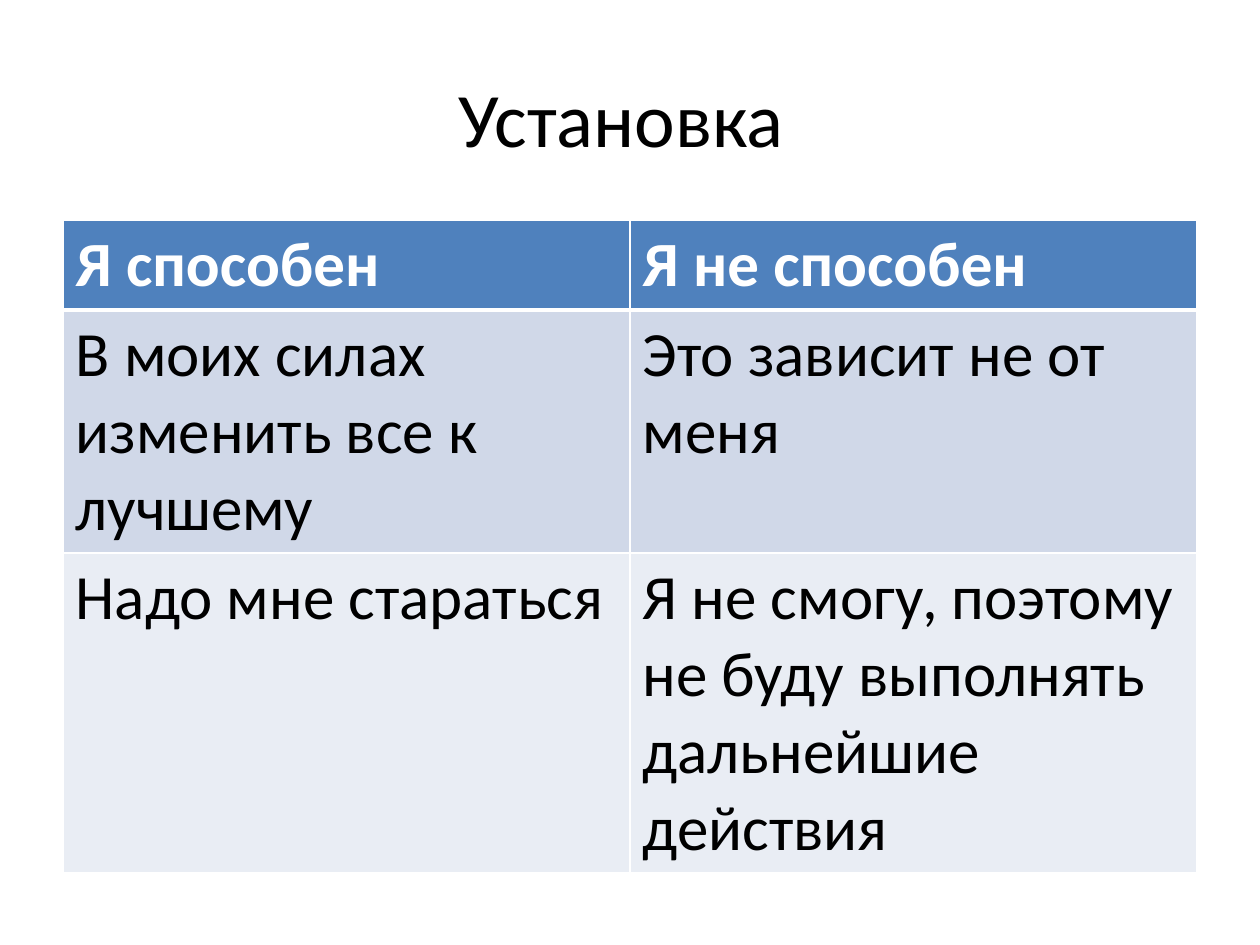
from lxml.etree import SubElement
from pptx import Presentation
from pptx.dml.color import RGBColor
from pptx.enum.text import MSO_ANCHOR, PP_ALIGN
from pptx.oxml.ns import qn
from pptx.util import Inches, Pt

COLORS = {
    "text": "000000",
    "border": "FFFFFF",
    "header_text": "FFFFFF",
    "header": "4F81BD",
    "bands": ["D0D8E8", "E9EDF4"],
}
ATTITUDES = [
    ("Я способен", "Я не способен"),
    ("В моих силах изменить все к лучшему", "Это зависит не от меня"),
    ("Надо мне стараться", "Я не смогу, поэтому не буду выполнять дальнейшие действия"),
]
ROW_HEIGHTS = [0.71, 1.93, 2.54]


class SlideBuilder:
    font = "Calibri"

    def __init__(self, slide):
        self.slide = slide

    def style_text(self, frame, text, size, color, bold=False, align=PP_ALIGN.LEFT):
        frame.text = text
        paragraph = frame.paragraphs[0]
        paragraph.alignment = align
        for run in paragraph.runs:
            run.font.name = self.font
            run.font.size = Pt(size)
            run.font.bold = bold
            run.font.color.rgb = RGBColor.from_string(color)

    def title(self, text, left, top, width, height):
        heading = self.slide.shapes.add_textbox(
            Inches(left), Inches(top), Inches(width), Inches(height)
        )
        frame = heading.text_frame
        frame.word_wrap = True
        frame.vertical_anchor = MSO_ANCHOR.MIDDLE
        self.style_text(frame, text, 44, COLORS["text"], align=PP_ALIGN.CENTER)

    def borders(self, cell, widths):
        properties = cell._tc.get_or_add_tcPr()
        for position, (side, width) in enumerate(widths.items()):
            line = properties.makeelement(qn(f"a:{side}"), {"w": str(Pt(width))})
            fill = SubElement(line, qn("a:solidFill"))
            SubElement(fill, qn("a:srgbClr"), val=COLORS["border"])
            properties.insert(position, line)

    def table(self, rows, heights, left, top, width):
        columns = len(rows[0])
        grid = self.slide.shapes.add_table(
            len(rows), columns, Inches(left), Inches(top),
            Inches(width), Inches(sum(heights)),
        ).table
        for column in grid.columns:
            column.width = Inches(width / columns)
        for index, (texts, height) in enumerate(zip(rows, heights)):
            grid.rows[index].height = Inches(height)
            header = index == 0
            fill = COLORS["header"] if header else COLORS["bands"][(index - 1) % 2]
            color = COLORS["header_text" if header else "text"]
            widths = {"lnL": 1, "lnR": 1, "lnT": 3 if index == 1 else 1,
                      "lnB": 3 if header else 1}
            for column, text in enumerate(texts):
                cell = grid.cell(index, column)
                self.style_text(cell.text_frame, text, 36, color, bold=header)
                cell.fill.solid()
                cell.fill.fore_color.rgb = RGBColor.from_string(fill)
                self.borders(cell, widths)


def main():
    presentation = Presentation()
    presentation.slide_width = Inches(10)
    presentation.slide_height = Inches(7.5)
    builder = SlideBuilder(presentation.slides.add_slide(presentation.slide_layouts[6]))
    builder.title("Установка ", 0.5, 0.3, 9, 1.25)
    builder.table(ATTITUDES, ROW_HEIGHTS, 0.5, 1.75, 9)
    presentation.save("out.pptx")


if __name__ == "__main__":
    main()
